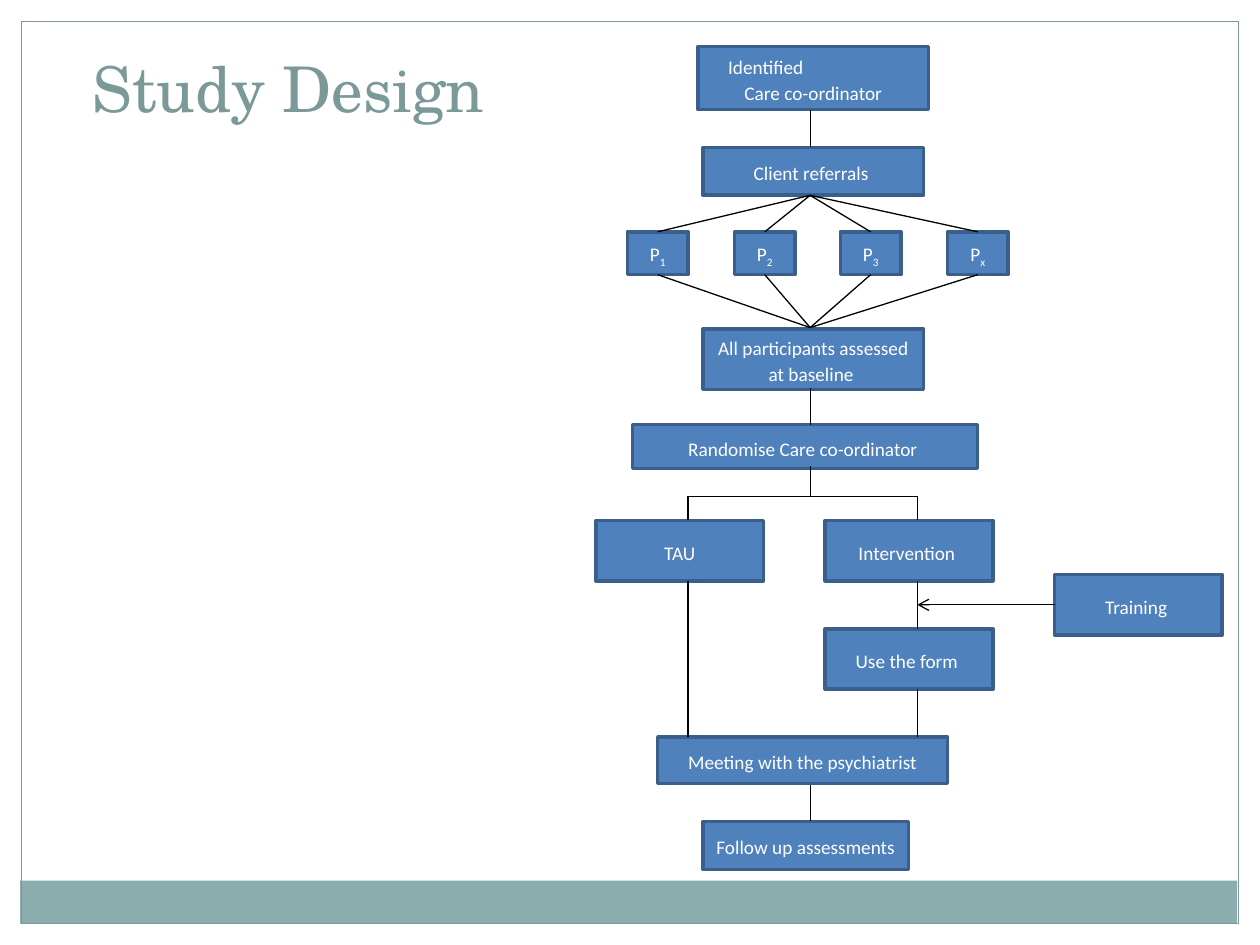
from pptx import Presentation
from pptx.dml.color import RGBColor
from pptx.enum.shapes import MSO_CONNECTOR, MSO_SHAPE
from pptx.enum.text import MSO_ANCHOR, PP_ALIGN
from pptx.oxml.ns import qn
from pptx.util import Inches, Pt
from lxml.etree import SubElement

HUES = {"box": "4F81BD", "edge": "3A5F8C", "text": "FFFFFF",
        "ink": "000000", "band": "8CADAE", "frame": "7C999A"}
RGB = {name: RGBColor.from_string(hue) for name, hue in HUES.items()}

deck = Presentation()
deck.slide_width, deck.slide_height = Inches(10), Inches(7.5)
CELL = deck.slide_width // 1000  # grid of 1000 columns by 750 rows
slide = deck.slides.add_slide(deck.slide_layouts[5])
shapes = slide.shapes


def add_box(left, top, wide, high, fill=None, edge=None, weight=2):
    box = shapes.add_shape(MSO_SHAPE.RECTANGLE, *(n * CELL for n in (left, top, wide, high)))
    box.shadow.inherit = False
    if fill:
        box.fill.solid()
        box.fill.fore_color.rgb = RGB[fill]
    else:
        box.fill.background()
    if edge:
        box.line.color.rgb = RGB[edge]
        box.line.width = Pt(weight)
    else:
        box.line.fill.background()
    return box


def add_line(x1, y1, x2, y2):
    line = shapes.add_connector(MSO_CONNECTOR.STRAIGHT, *(n * CELL for n in (x1, y1, x2, y2)))
    line.line.color.rgb = RGB["ink"]
    line.line.width = Pt(0.75)
    SubElement(line._element.spPr, qn("a:effectLst"))
    return line


# Page frame and bottom band
add_box(16, 699, 966, 34, fill="band")
add_box(17, 17, 966, 716, edge="frame", weight=0.75)

# Title
title = shapes.title
title.left, title.top, title.width, title.height = (n * CELL for n in (-4, 21, 480, 83))
title.text_frame.text = "Study Design "
title.text_frame.vertical_anchor = MSO_ANCHOR.BOTTOM
head = title.text_frame.paragraphs[0]
head.alignment = PP_ALIGN.CENTER
font = head.runs[0].font
font.name, font.size = "TeX Gyre Schola", Pt(36)
font.color.rgb = RGB["frame"]

# Flow boxes: text, left, top, width, height
STEPS = [
    ("Identified\nCare co-ordinator", 554, 37, 183, 50),
    ("Client referrals ", 558, 117, 175, 38),
    ("All participants assessed at baseline ", 558, 261, 175, 48),
    ("Randomise Care co-ordinator ", 502, 337, 274, 35),
    ("TAU", 473, 413, 133, 48),
    ("Intervention ", 655, 413, 133, 48),
    ("Use the form ", 655, 499, 133, 48),
    ("Training ", 837, 456, 133, 48),
    ("Meeting with the psychiatrist", 522, 585, 230, 37),
    ("Follow up assessments", 558, 652, 163, 38),
]
PEOPLE = [("P" + mark, round(498 + i * 84.7), 184, 48, 34) for i, mark in enumerate("123x")]
boxes = {}
for text, *place in STEPS + PEOPLE:
    box = add_box(*place, fill="box", edge="edge")
    boxes[text.strip()] = box
    frame = box.text_frame
    frame.text = text
    frame.word_wrap = True
    frame.vertical_anchor = MSO_ANCHOR.MIDDLE
    for para in frame.paragraphs:
        para.alignment = PP_ALIGN.CENTER
        para.line_spacing = 1.15
        para.space_after = Pt(10)
        if (text, *place) in PEOPLE:
            para.runs[0].text = "P"
            mark = para.add_run()
            mark.text = text[1:]
            mark.font._element.set("baseline", "-25000")
        for run in para.runs:
            run.font.name, run.font.size = "Calibri", Pt(11)
            run.font.color.rgb = RGB["text"]

# First line of the top box is set to the left
first = boxes["Identified\nCare co-ordinator"].text_frame.paragraphs[0]
first.alignment = PP_ALIGN.LEFT
first.space_after = Pt(0)
first._p.get_or_add_pPr().set("marL", str(14 * CELL))

# Fan out to the participants and back in
MID, WEST, EAST = 643, 546, 728
for name, left, top, wide, high in PEOPLE:
    add_line(MID, 155, left, top).end_connect(boxes[name], 0)
    add_line(left, top + high, MID, 260).begin_connect(boxes[name], 2)

# Vertical links: column, top, bottom
LINKS = [(MID, 87, 114), (MID, 98, 117), (MID, 308, 337), (MID, 370, 394),
         (MID, 623, 652), (WEST, 394, 413), (WEST, 461, 585),
         (EAST, 394, 413), (EAST, 461, 499), (EAST, 547, 585)]
for x, top, low in LINKS:
    add_line(x, top, x, low)
add_line(EAST, 394, WEST, 394)

# Training arrow
arrow = add_line(837, 480, EAST, 480)
arrow.begin_connect(boxes["Training"], 1)
SubElement(arrow.line._get_or_add_ln(), qn("a:tailEnd"), type="arrow")

deck.save("out.pptx")
